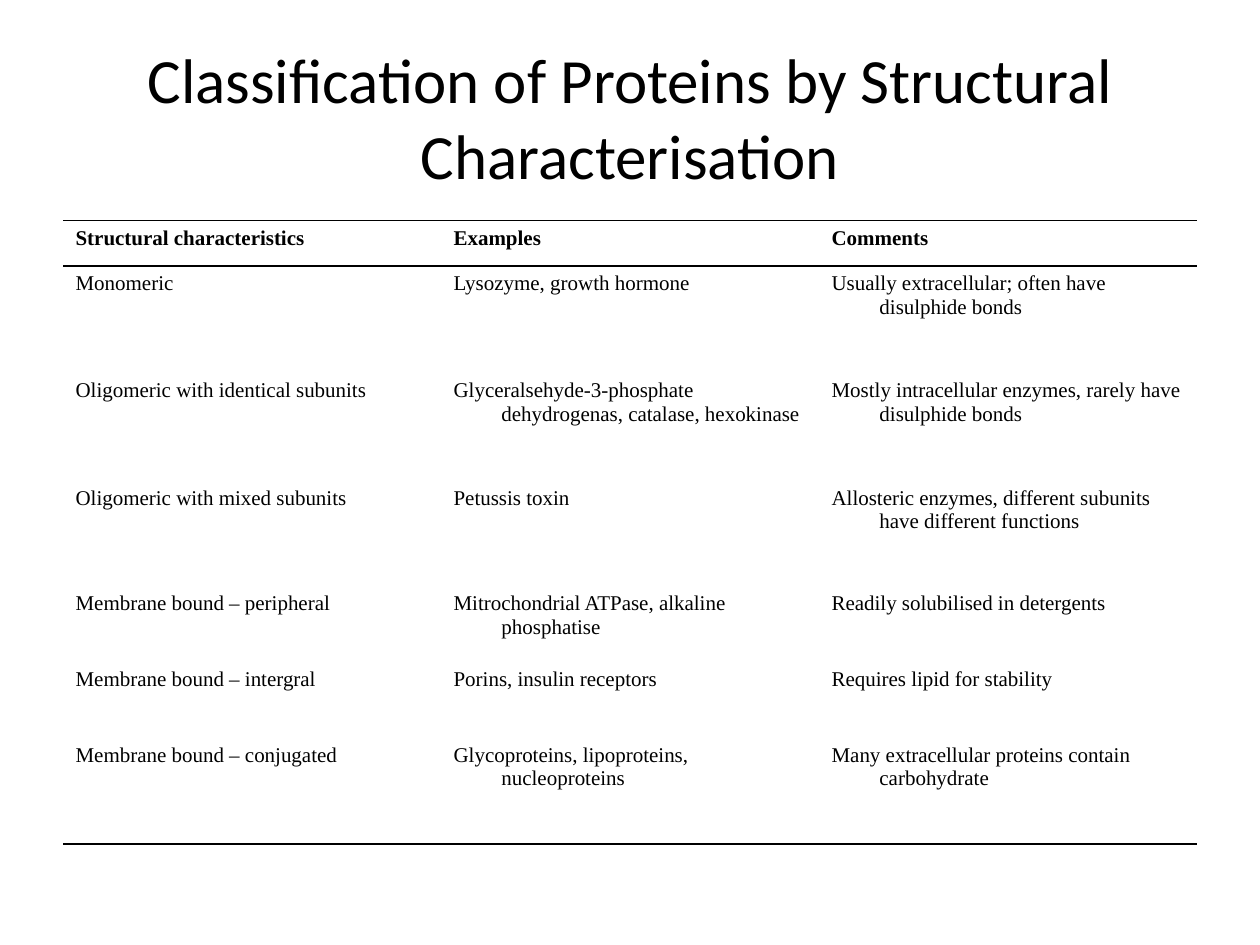
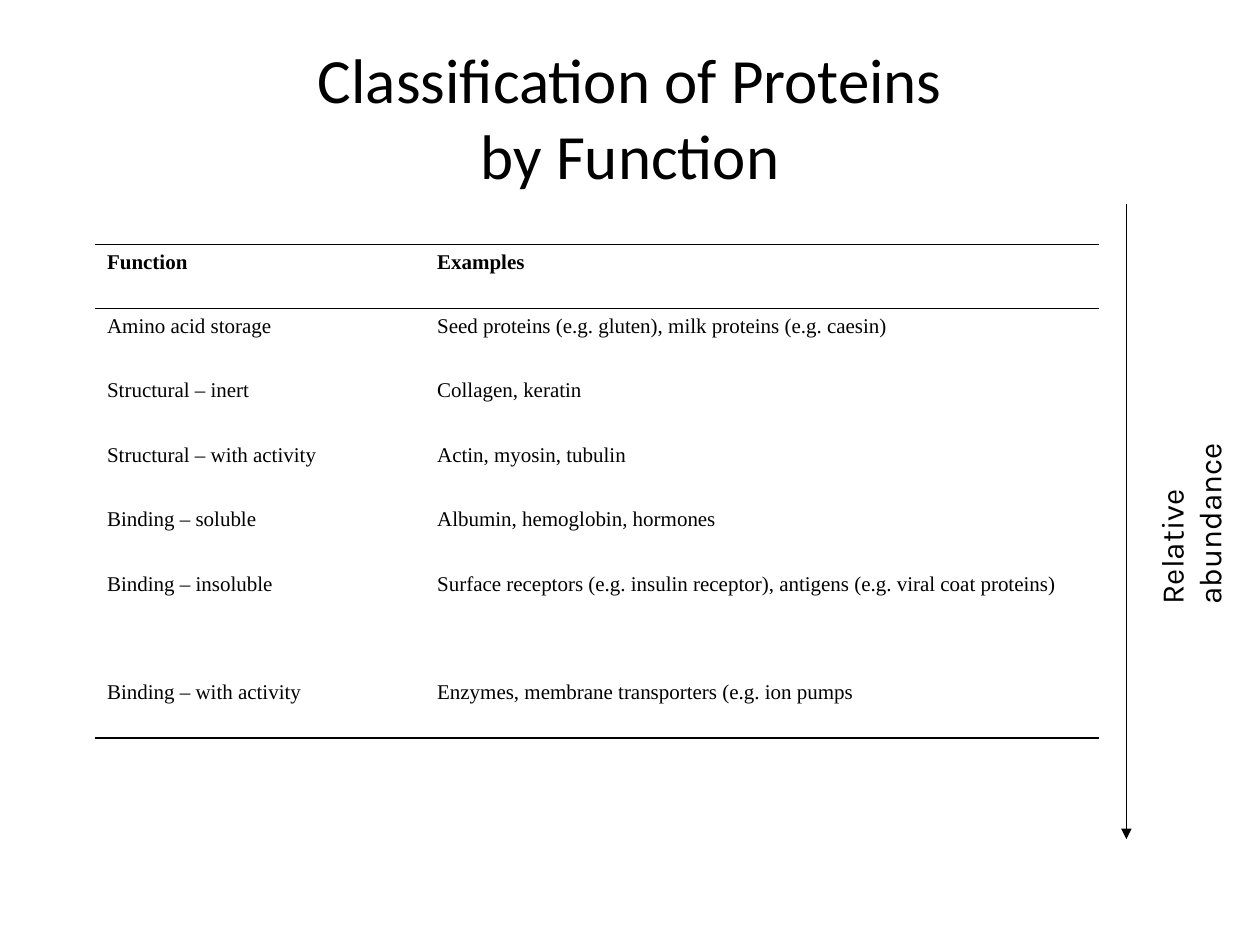
"""Build two slides that classify proteins by structure and by function."""
from lxml.etree import SubElement
from pptx import Presentation
from pptx.dml.color import RGBColor
from pptx.enum.shapes import MSO_CONNECTOR
from pptx.enum.text import MSO_ANCHOR, MSO_AUTO_SIZE, PP_ALIGN
from pptx.oxml import parse_xml
from pptx.oxml.ns import nsdecls, qn
from pptx.util import Inches, Pt

COLORS = {"ink": "000000", "paper": "FFFFFF"}
FONTS = {"title": "Calibri", "table": "Times New Roman", "label": "Karla"}
TITLE_ONLY = 5

STRUCTURE = {
    "title": "Classification of Proteins by Structural Characterisation",
    "left": 0.5,
    "top": 1.75,
    "columns": [3, 3, 3],
    "heights": [0.36, 0.85, 0.85, 0.84, 0.6, 0.6, 0.85],
    "hanging": 0.38,
    "rows": [
        ("Structural characteristics", "Examples", "Comments"),
        ("Monomeric", "Lysozyme, growth hormone",
         "Usually extracellular; often have disulphide bonds"),
        ("Oligomeric with identical subunits",
         "Glyceralsehyde-3-phosphate dehydrogenas, catalase, hexokinase",
         "Mostly intracellular enzymes, rarely have disulphide bonds"),
        ("Oligomeric with mixed subunits", "Petussis toxin",
         "Allosteric enzymes, different subunits have different functions"),
        ("Membrane bound – peripheral",
         "Mitrochondrial ATPase, alkaline phosphatise",
         "Readily solubilised in detergents"),
        ("Membrane bound – intergral", "Porins, insulin receptors",
         "Requires lipid for stability"),
        ("Membrane bound – conjugated",
         "Glycoproteins, lipoproteins, nucleoproteins",
         "Many extracellular proteins contain carbohydrate"),
    ],
}
FUNCTION = {
    "title": "Classification of Proteins\vby Function",
    "left": 0.75,
    "top": 1.94,
    "columns": [2.62, 5.35],
    "heights": [0.51, 0.51, 0.51, 0.51, 0.52, 0.85, 0.51],
    "hanging": 0,
    "rows": [
        ("Function", "Examples"),
        ("Amino acid storage",
         "Seed proteins (e.g. gluten), milk proteins (e.g. caesin)"),
        ("Structural – inert", "Collagen, keratin"),
        ("Structural – with activity", "Actin, myosin, tubulin"),
        ("Binding – soluble", "Albumin, hemoglobin, hormones"),
        ("Binding – insoluble",
         "Surface receptors (e.g. insulin receptor), "
         "antigens (e.g. viral coat proteins)"),
        ("Binding – with activity",
         "Enzymes, membrane transporters (e.g. ion pumps"),
    ],
}
ABUNDANCE = {"text": "Relative abundance", "box": (8.09, 3.49, 2.41, 0.4),
             "arrow": (8.94, 1.62, 8.94, 6.66)}


def style_runs(para, font, size, bold=False):
    for span in para.runs:
        span.font.name = FONTS[font]
        span.font.size = Pt(size)
        span.font.bold = bold
        span.font.color.rgb = RGBColor.from_string(COLORS["ink"])


def rule_cell(cell, ruled_sides):
    properties = cell._tc.get_or_add_tcPr()
    for position, side in enumerate("LRTB"):
        if side in ruled_sides:
            paint = f'<a:solidFill><a:srgbClr val="{COLORS["ink"]}"/></a:solidFill>'
        else:
            paint = "<a:noFill/>"
        border = f'<a:ln{side} {nsdecls("a")} w="{Pt(1)}">{paint}</a:ln{side}>'
        properties.insert(position, parse_xml(border))


def add_ruled_table(slide, content):
    rows, columns, heights = (content[key] for key in ("rows", "columns", "heights"))
    frame = slide.shapes.add_table(
        len(rows), len(columns), Inches(content["left"]), Inches(content["top"]),
        Inches(sum(columns)), Inches(sum(heights)))
    table = frame.table
    table.first_row = table.horz_banding = False
    for column, width in zip(table.columns, columns):
        column.width = Inches(width)
    sides = {0: "TB", 1: "T", len(rows) - 1: "B"}
    for index, (row, height) in enumerate(zip(table.rows, heights)):
        row.height = Inches(height)
        for cell, text in zip(row.cells, rows[index]):
            cell.text_frame.text = text
            cell.fill.background()
            rule_cell(cell, sides.get(index, ""))
            para = cell.text_frame.paragraphs[0]
            style_runs(para, "table", 12, bold=index == 0)
            if content["hanging"]:
                indent = Inches(content["hanging"])
                para._p.get_or_add_pPr().set("marL", str(indent))
                para._p.get_or_add_pPr().set("indent", str(-indent))


def add_classification(deck, content):
    slide = deck.slides.add_slide(deck.slide_layouts[TITLE_ONLY])
    slide.background.fill.solid()
    slide.background.fill.fore_color.rgb = RGBColor.from_string(COLORS["paper"])
    title = slide.shapes.title
    title.left, title.top, title.width, title.height = map(Inches, (0.5, 0.3, 9, 1.25))
    title.text_frame.text = content["title"]
    title.text_frame.vertical_anchor = MSO_ANCHOR.MIDDLE
    para = title.text_frame.paragraphs[0]
    para.alignment = PP_ALIGN.CENTER
    style_runs(para, "title", 36)
    add_ruled_table(slide, content)
    return slide


def add_abundance_arrow(slide):
    arrow = slide.shapes.add_connector(
        MSO_CONNECTOR.STRAIGHT, *map(Inches, ABUNDANCE["arrow"]))
    arrow.line.width = Pt(0.75)
    arrow.line.color.rgb = RGBColor.from_string(COLORS["ink"])
    SubElement(arrow.line._get_or_add_ln(), qn("a:tailEnd"), type="triangle")
    SubElement(arrow._element.spPr, qn("a:effectLst"))

    label = slide.shapes.add_textbox(*map(Inches, ABUNDANCE["box"]))
    label.rotation = 270
    label.text_frame.text = ABUNDANCE["text"]
    label.text_frame.word_wrap = True
    label.text_frame.auto_size = MSO_AUTO_SIZE.NONE
    style_runs(label.text_frame.paragraphs[0], "label", 18)


def main():
    deck = Presentation()
    deck.slide_width, deck.slide_height = Inches(10), Inches(7.5)
    add_classification(deck, STRUCTURE)
    add_abundance_arrow(add_classification(deck, FUNCTION))
    deck.save("out.pptx")


if __name__ == "__main__":
    main()
